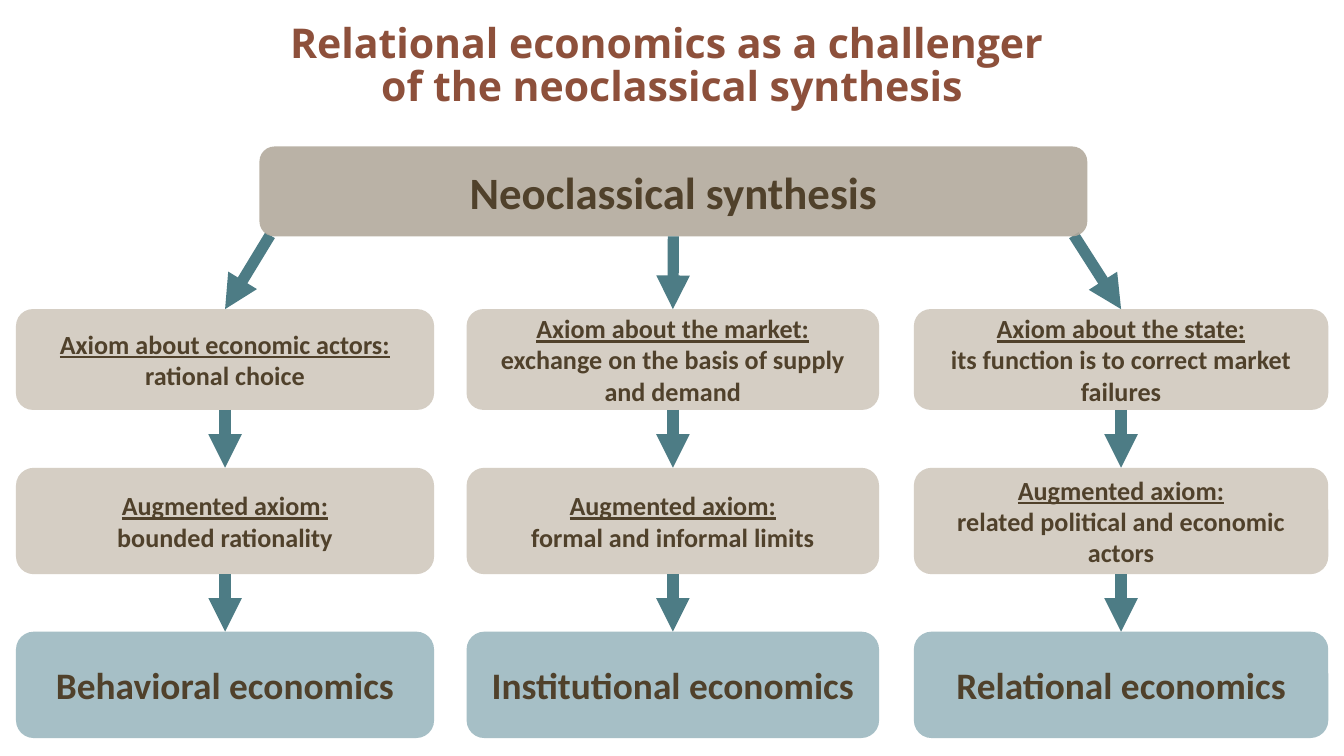
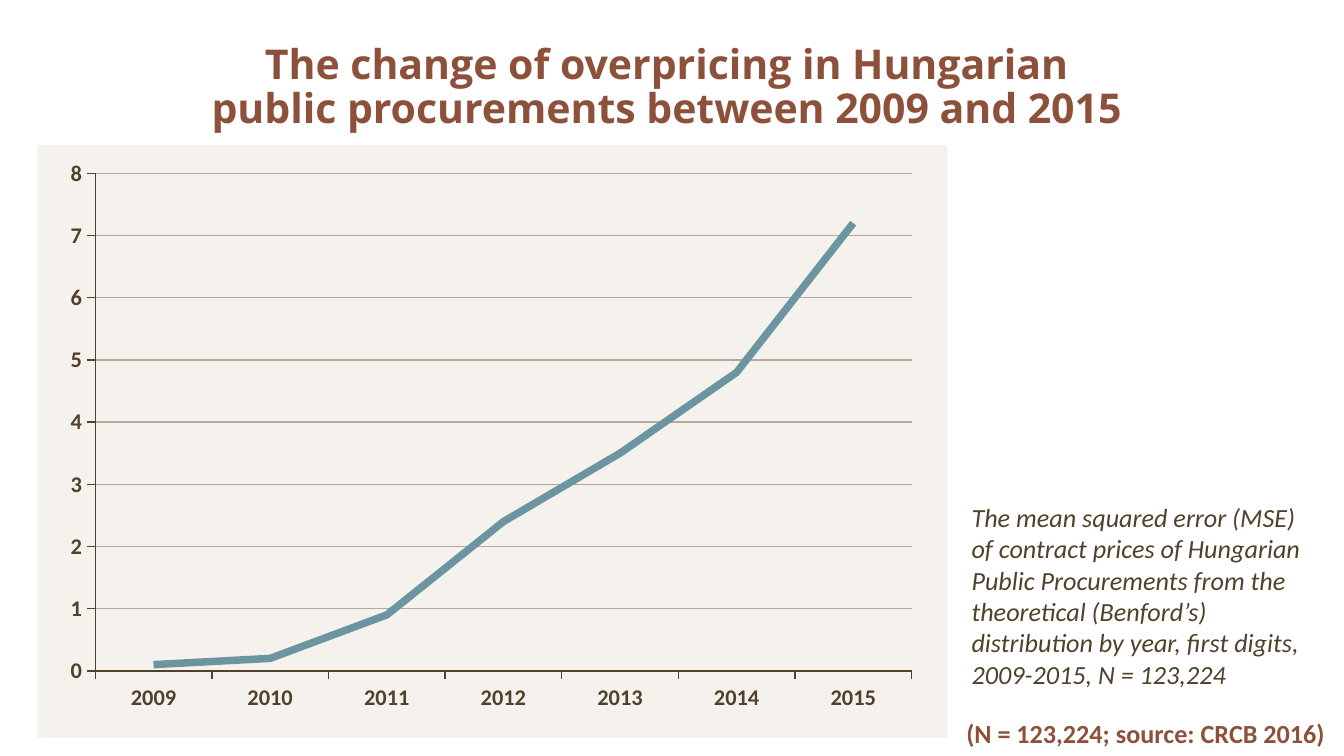
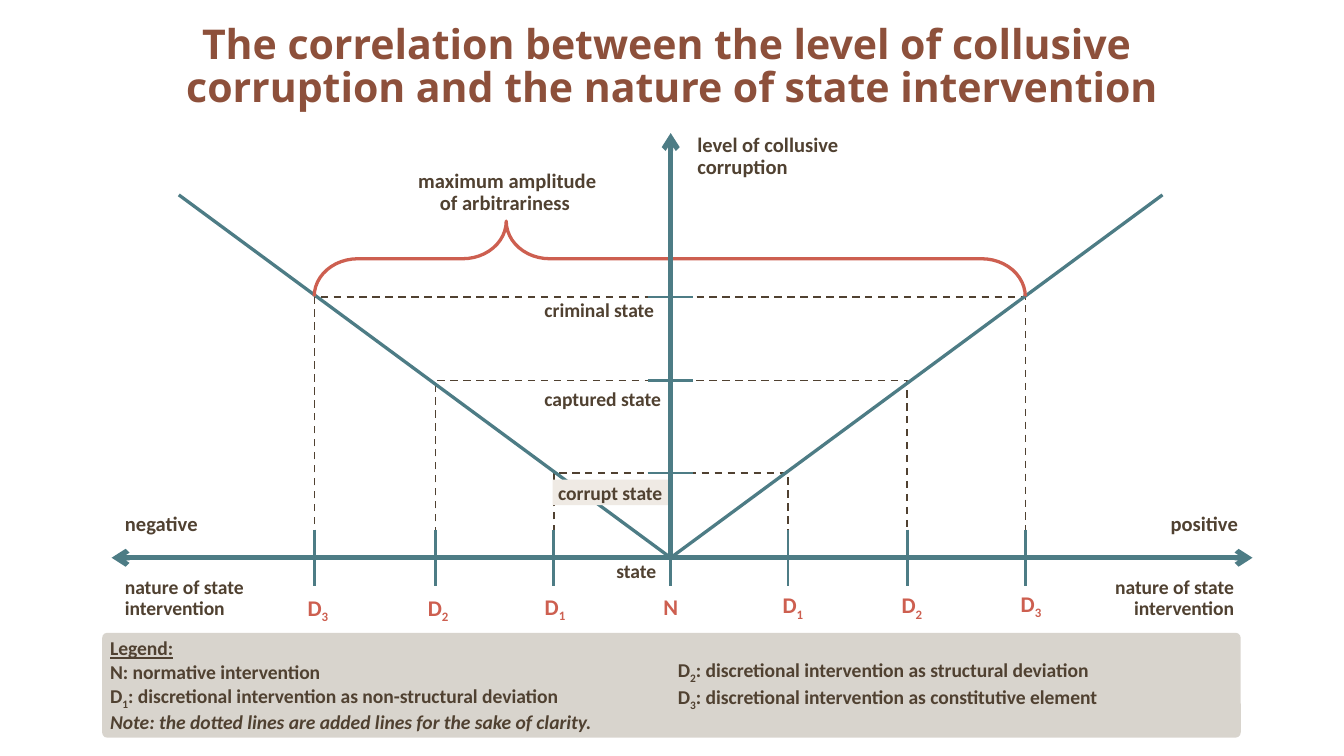
"""Build three slides on relational economics, overpricing and corruption."""
from lxml.etree import SubElement
from pptx import Presentation
from pptx.chart.data import CategoryChartData
from pptx.dml.color import RGBColor
from pptx.enum.chart import XL_CHART_TYPE, XL_MARKER_STYLE, XL_TICK_MARK
from pptx.enum.dml import MSO_LINE
from pptx.enum.shapes import MSO_CONNECTOR, MSO_SHAPE
from pptx.enum.text import MSO_ANCHOR, MSO_AUTO_SIZE, PP_ALIGN
from pptx.oxml import parse_xml
from pptx.oxml.ns import nsdecls, qn
from pptx.util import Pt

RUST = RGBColor(0x8D, 0x50, 0x3B)
BROWN = RGBColor(0x50, 0x41, 0x2B)
UMBER = RGBColor(0x50, 0x41, 0x31)
TEAL = RGBColor(0x4D, 0x7C, 0x85)
BLUE = RGBColor(0x6B, 0x95, 0xA1)
SAND = RGBColor(0xD1, 0xC9, 0xBE)
STONE = RGBColor(0xB3, 0xAA, 0x9D)
CREAM = RGBColor(0xEF, 0xEA, 0xE4)
CORAL = RGBColor(0xCD, 0x5F, 0x50)

TITLE_FONT = "Open Sans"
BODY_FONT = "Calibri"
LEFT, CENTER, RIGHT = PP_ALIGN.LEFT, PP_ALIGN.CENTER, PP_ALIGN.RIGHT
DEFAULT_INSETS = (7.2, 3.6, 7.2, 3.6)
TIGHT_INSETS = (3, 0, 3, 0)
NO_TABLE_STYLE = "{2D5ABB26-0587-4C30-8999-92F81FD0307C}"

COLUMNS = [
    (8.6, 224, "Axiom about economic actors:", "rational choice",
     "bounded rationality", "Behavioral economics"),
    (250, 221, "Axiom about the market:", "exchange on the basis of supply and demand",
     "formal and informal limits", "Institutional economics"),
    (489.6, 222, "Axiom about the state:", "its function is to correct market failures",
     "related political and economic actors", "Relational economics"),
]

ORIGIN_X, ORIGIN_Y = 359.3, 298.8
REACHES = [(233.3, 486, 203.8), (168.5, 549.4, 159.1), (296.6, 422.2, 253.4)]
DEGREES = [
    ("D", "1", 244, 314, 106.6), ("D", "2", 194.4, 314.6, 80.6),
    ("D", "3", 143.3, 314.6, 54), ("D", "1", 373.7, 313.2, 102.2),
    ("D", "2", 452.9, 313.2, 71.3), ("D", "3", 506.2, 312.5, 92.2),
    ("N", "", 305.3, 314, 108),
]
AXIS_LABELS = [
    ("level of collusive corruption", 366.5, 68.4, 96.5, 33, 11, LEFT),
    ("nature of state intervention", 586.8, 306, 81.4, 32.4, 10.5, RIGHT),
    ("nature of state intervention", 59.8, 306, 87.8, 32.4, 10.5, LEFT),
    ("maximum amplitude of arbitrariness ", 212.4, 87.8, 118.8, 31, 11, CENTER),
    ("positive", 612.7, 270, 57.6, 26.6, 11, RIGHT),
    ("negative", 59.8, 270, 61.2, 25.2, 11, LEFT),
    ("state", 320.4, 296, 38.2, 22.3, 10.5, RIGHT),
]
LEGEND = [
    [
        [("Legend:", "bu")],
        [("N: normative intervention", "b")],
        [("D", "b"), ("1", "bs"), (": discretional intervention as non-structural deviation", "b")],
        [("Note: the dotted lines are added lines for the sake of clarity.", "bi")],
    ],
    [
        [("D", "b"), ("2", "bs"), (": discretional intervention as structural deviation", "b")],
        [("D", "b"), ("3", "bs"), (": discretional intervention as constitutive element", "b")],
    ],
]


def write_spans(para, spans, size, color, face=BODY_FONT):
    """Add runs marked b (bold), i (italic), u (underline) or s (subscript)."""
    for text, marks in spans:
        span = para.add_run()
        span.text = text
        font = span.font
        font.name, font.size = face, Pt(size)
        font.color.rgb = color
        font.bold, font.italic, font.underline = ("b" in marks, "i" in marks, "u" in marks)
        if "s" in marks:
            font._element.set("baseline", "-25000")


def write_paragraphs(frame, paragraphs, size, color, align=LEFT, spacing=None):
    """Fill a text frame with paragraphs, each a list of marked spans."""
    for index, spans in enumerate(paragraphs):
        para = frame.add_paragraph() if index else frame.paragraphs[0]
        para.alignment = align
        if spacing:
            para.line_spacing = spacing
        write_spans(para, spans, size, color)


def set_insets(target, insets):
    """Set the left, top, right and bottom margins of a frame or cell."""
    (target.margin_left, target.margin_top,
     target.margin_right, target.margin_bottom) = map(Pt, insets)


def add_titled_page(deck, lines, height):
    """Add a title-only slide with a two-line title."""
    page = deck.slides.add_slide(deck.slide_layouts[5])
    title = page.shapes.title
    title.left, title.top, title.width, title.height = Pt(8.6), Pt(0), Pt(702.8), Pt(height)
    frame = title.text_frame
    frame.auto_size = MSO_AUTO_SIZE.NONE
    frame.vertical_anchor = MSO_ANCHOR.MIDDLE
    para = frame.paragraphs[0]
    para.alignment = CENTER
    para.line_spacing = 0.88
    for index, line in enumerate(lines):
        if index:
            para.add_line_break()
        write_spans(para, [(line, "b")], 22, RUST, TITLE_FONT)
    return page


def add_box(page, kind, left, top, width, height, fill=None, opacity=100):
    """Add a borderless preset shape with an optional translucent fill."""
    box = page.shapes.add_shape(kind, Pt(left), Pt(top), Pt(width), Pt(height))
    box.shadow.inherit = False
    box.line.fill.background()
    if fill is None:
        box.fill.background()
        return box
    box.fill.solid()
    box.fill.fore_color.rgb = fill
    if opacity < 100:
        color = box._element.spPr.find(qn("a:solidFill"))[0]
        SubElement(color, qn("a:alpha"), val=str(opacity * 1000))
    return box


def add_outline(page, kind, left, top, width, height, color, weight):
    """Add an unfilled preset shape with a coloured line."""
    box = add_box(page, kind, left, top, width, height)
    box.line.color.rgb = color
    box.line.width = Pt(weight)
    return box


def add_card(page, left, top, width, height, fill, opacity, paragraphs, size):
    """Add a rounded card with centred text."""
    card = add_box(page, MSO_SHAPE.ROUNDED_RECTANGLE, left, top, width, height, fill, opacity)
    card.text_frame.word_wrap = True
    card.text_frame.vertical_anchor = MSO_ANCHOR.MIDDLE
    write_paragraphs(card.text_frame, paragraphs, size, BROWN, CENTER)
    return card


def add_label(page, spans, left, top, width, height, size, color,
              align=LEFT, spacing=None, insets=DEFAULT_INSETS):
    """Add a wrapped one-paragraph text box."""
    label = page.shapes.add_textbox(Pt(left), Pt(top), Pt(width), Pt(height))
    frame = label.text_frame
    frame.word_wrap = True
    set_insets(frame, insets)
    write_paragraphs(frame, [spans], size, color, align, spacing)


def add_line(page, start, end, weight, head=None, tail=None):
    """Add a straight teal connector with optional arrowheads."""
    line = page.shapes.add_connector(MSO_CONNECTOR.STRAIGHT, *map(Pt, start + end))
    line.line.color.rgb = TEAL
    line.line.width = Pt(weight)
    properties = line._element.spPr
    outline = properties.find(qn("a:ln"))
    for tag, arrow in (("a:headEnd", head), ("a:tailEnd", tail)):
        if arrow:
            SubElement(outline, qn(tag), type=arrow)
    SubElement(properties, qn("a:effectLst"))
    return line


def join_cards(page, upper, lower):
    """Draw an arrow from the bottom of one card to the top of another."""
    arrow = add_line(page, (0, 0), (0, 0), 6, tail="triangle")
    arrow.begin_connect(upper, 2)
    arrow.end_connect(lower, 0)


def build_synthesis_page(deck):
    """Build the tree from the neoclassical synthesis to its challengers."""
    page = add_titled_page(deck, ["Relational economics as a challenger ",
                                  "of the neoclassical synthesis"], 72)
    axioms = []
    for left, width, heading, axiom, augmented, school in COLUMNS:
        first = add_card(page, left, 165.6, width, 54, SAND, 90,
                         [[(heading, "bu")], [(axiom, "b")]], 14)
        second = add_card(page, left, 250.6, width, 57, SAND, 90,
                          [[("Augmented axiom:", "bu")], [(augmented, "b")]], 14)
        third = add_card(page, left, 338.4, width, 57, BLUE, 60, [[(school, "b")]], 20)
        join_cards(page, first, second)
        join_cards(page, second, third)
        axioms.append(first)
    for start_x, axiom_card in ((144.7, axioms[0]), (575.3, axioms[2])):
        arrow = add_line(page, (start_x, 126), (start_x, 165.6), 6, tail="triangle")
        arrow.end_connect(axiom_card, 0)
    synthesis = add_card(page, 139, 78.5, 443.5, 48.2, STONE, 90,
                         [[("Neoclassical synthesis", "b")]], 24)
    join_cards(page, synthesis, axioms[1])


def style_axis(axis):
    """Give a chart axis its line, ticks and bold labels."""
    axis.major_tick_mark = XL_TICK_MARK.OUTSIDE
    axis.minor_tick_mark = XL_TICK_MARK.NONE
    axis.format.line.color.rgb = BROWN
    axis.format.line.width = Pt(0.75)
    font = axis.tick_labels.font
    font.name, font.size, font.bold = BODY_FONT, Pt(12), True
    font.color.rgb = BROWN


def place_plot(chart, **fractions):
    """Fix the inner plot area and make the chart background clear."""
    space = chart._chartSpace
    area = space.find(qn("c:chart")).find(qn("c:plotArea"))
    for layout in area.findall(qn("c:layout")):
        area.remove(layout)
    modes = '<c:layoutTarget val="inner"/><c:xMode val="edge"/><c:yMode val="edge"/>'
    sizes = "".join(f'<c:{name} val="{value}"/>' for name, value in fractions.items())
    area.insert(0, parse_xml(f'<c:layout {nsdecls("c")}><c:manualLayout>{modes}{sizes}'
                             '</c:manualLayout></c:layout>'))
    space.find(qn("c:chart")).addnext(parse_xml(
        f'<c:spPr {nsdecls("c", "a")}><a:noFill/><a:ln><a:noFill/></a:ln></c:spPr>'))


def add_overpricing_chart(page):
    """Add the line chart of yearly overpricing."""
    data = CategoryChartData()
    data.categories = [str(year) for year in range(2009, 2016)]
    data.add_series("Series 1", (0.1, 0.2, 0.9, 2.4, 3.5, 4.8, 7.2))
    chart = page.shapes.add_chart(XL_CHART_TYPE.LINE, Pt(9.4), Pt(77.8),
                                  Pt(520.6), Pt(303), data).chart
    chart.has_legend = chart.has_title = False
    chart.font.name, chart.font.size = BODY_FONT, Pt(10)
    chart.plots[0].vary_by_categories = False
    values = chart.value_axis
    for axis in (chart.category_axis, values):
        style_axis(axis)
    values.minimum_scale, values.maximum_scale, values.major_unit = 0, 8, 1
    values.has_major_gridlines = True
    values.major_gridlines.format.line.color.rgb = STONE
    values.major_gridlines.format.line.width = Pt(0.75)
    series = chart.plots[0].series[0]
    series.smooth = False
    series.marker.style = XL_MARKER_STYLE.NONE
    series.format.line.color.rgb = BLUE
    series.format.line.width = Pt(4)
    place_plot(chart, x=0.08, y=0.05, w=0.84, h=0.88)


def build_overpricing_page(deck):
    """Build the overpricing chart with its explanation and source."""
    page = add_titled_page(deck, ["The change of overpricing in Hungarian ",
                                  "public procurements between 2009 and 2015 "], 95)
    add_box(page, MSO_SHAPE.RECTANGLE, 20, 77.8, 487.4, 317.5, CREAM, 60)
    add_overpricing_chart(page)
    explanation = ("The mean squared error (MSE) of contract prices of Hungarian Public "
                   "Procurements from the theoretical (Benford’s) distribution by year, "
                   "first digits, 2009-2015, N = 123,224")
    add_label(page, [(explanation, "i")], 513.4, 265, 198.7, 108.7, 14, BROWN)
    add_label(page, [("(N = 123,224; source: CRCB 2016)", "b")],
              507.6, 380.9, 212.4, 24.5, 14, RUST, CENTER)


def add_reaches(page):
    """Add the dashed frames and the ticks where they meet both axes."""
    for left, right, top in REACHES:
        frame = add_outline(page, MSO_SHAPE.RECTANGLE, left, top,
                            right - left, ORIGIN_Y - top, UMBER, 1)
        frame.line.dash_style = MSO_LINE.DASH
    ticks = [x for left, right, _ in REACHES for x in (left, right)]
    for x in ticks + [ORIGIN_X]:
        add_line(page, (x, 283.7), (x, 314), 1.5)
    for end_x in (95.8, 622.8):
        add_line(page, (ORIGIN_X, ORIGIN_Y), (end_x, 104.4), 1.75)
    for _, _, top in REACHES:
        add_line(page, (347, top), (371.5, top), 1.5)


def add_corruption_labels(page):
    """Label the degrees, the states and the axes."""
    for letter, degree, left, top, width in DEGREES:
        spans = [(letter, "b")] + ([(degree, "bs")] if degree else [])
        add_label(page, spans, left, top, width, 27.4, 12, CORAL, CENTER)
    for text, top in (("captured state", 207.4), ("criminal state", 159.8)):
        add_label(page, [(text, "b")], 288.7, top, 72, 14, 10.5, UMBER, insets=TIGHT_INSETS)
    corrupt = add_box(page, MSO_SHAPE.RECTANGLE, 296, 257, 63.4, 13.7, CREAM)
    set_insets(corrupt.text_frame, TIGHT_INSETS)
    write_paragraphs(corrupt.text_frame, [[("corrupt state", "b")]], 10.5, UMBER)
    for text, left, top, width, height, size, align in AXIS_LABELS:
        add_label(page, [(text, "b")], left, top, width, height, size, UMBER, align,
                  spacing=0.9 if " " in text else None)


def add_legend(page):
    """Add the two-column legend table."""
    table = page.shapes.add_table(1, 2, Pt(55.4), Pt(338.4), Pt(608.4), Pt(56)).table
    table.first_row = table.horz_banding = False
    table._tbl.tblPr.find(qn("a:tableStyleId")).text = NO_TABLE_STYLE
    for cell, paragraphs in zip(table.rows[0].cells, LEGEND):
        cell.fill.background()
        cell.vertical_anchor = MSO_ANCHOR.MIDDLE
        set_insets(cell, (3.6, 2.9, 3.6, 2.9))
        write_paragraphs(cell.text_frame, paragraphs, 10.5, UMBER)


def build_corruption_page(deck):
    """Build the diagram of corruption against state intervention."""
    page = add_titled_page(deck, ["The correlation between the level of collusive ",
                                  "corruption and the nature of state intervention"], 72.7)
    panel = add_box(page, MSO_SHAPE.ROUNDED_RECTANGLE, 54.7, 339, 610, 56.2, STONE, 50)
    panel.adjustments[0] = 0.05
    add_reaches(page)
    add_corruption_labels(page)
    brace = add_outline(page, MSO_SHAPE.LEFT_BRACE, 338.6, -51.8, 40.3, 380.9, CORAL, 1.75)
    brace.rotation = 90
    brace.adjustments[0], brace.adjustments[1] = 0.58, 0.73
    add_line(page, (59.8, ORIGIN_Y), (671, ORIGIN_Y), 2.75, head="arrow", tail="arrow")
    add_line(page, (ORIGIN_X, ORIGIN_Y), (ORIGIN_X, 71.3), 2.75, tail="arrow")
    add_legend(page)


def main():
    """Build and save the deck."""
    deck = Presentation()
    deck.slide_width, deck.slide_height = Pt(720), Pt(405)
    build_synthesis_page(deck)
    build_overpricing_page(deck)
    build_corruption_page(deck)
    deck.save("out.pptx")


if __name__ == "__main__":
    main()
